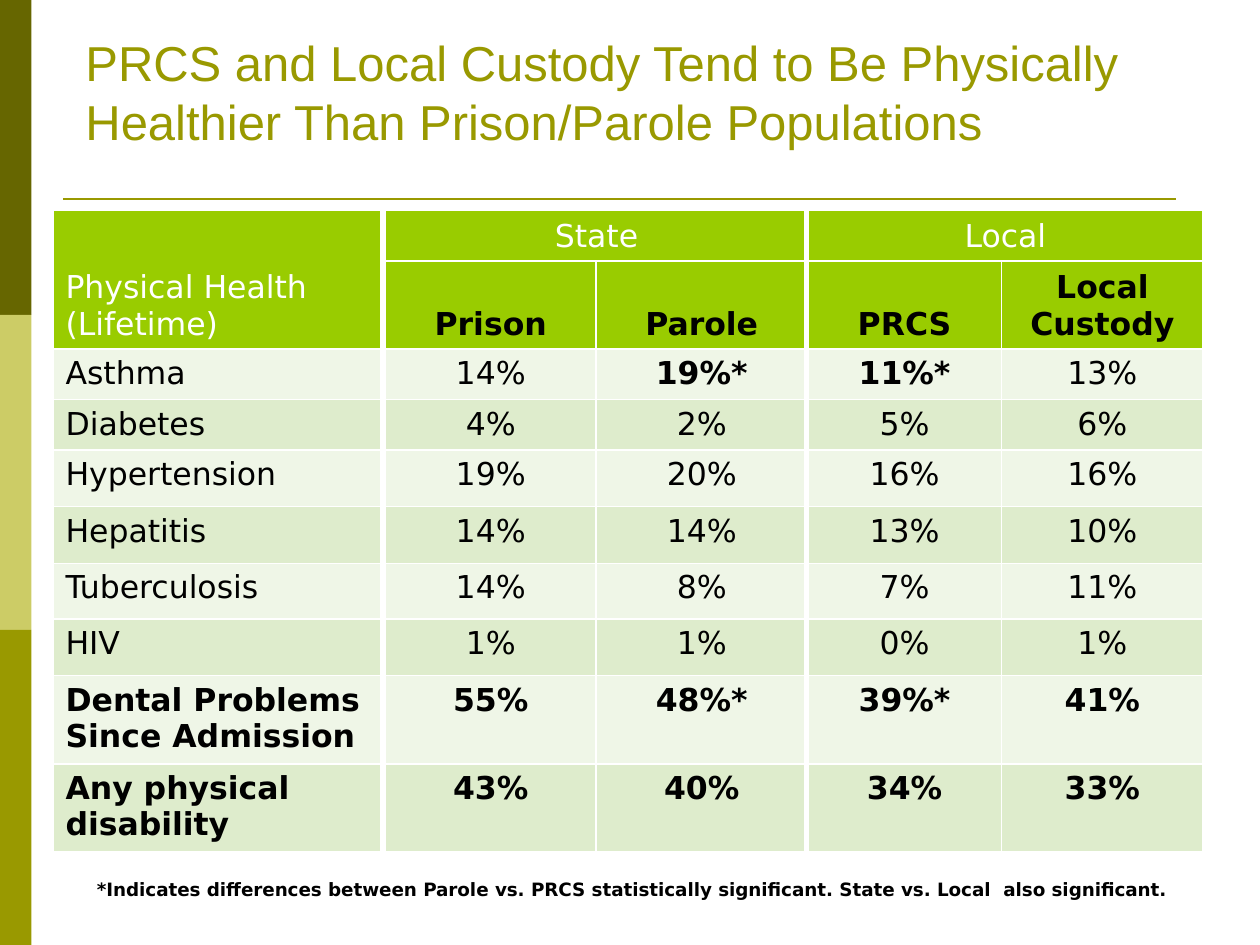
"""Build a slide with a table comparing physical health across custody groups."""
import pptx
import pptx.dml.color
import pptx.enum.shapes
import pptx.enum.text
import pptx.oxml
import pptx.util
import pptx.oxml.ns

Inches = pptx.util.Inches
RGBColor = pptx.dml.color.RGBColor
ANCHOR = pptx.enum.text.MSO_ANCHOR
ALIGN = pptx.enum.text.PP_ALIGN

BLACK = RGBColor(0x00, 0x00, 0x00)
WHITE = RGBColor(0xFF, 0xFF, 0xFF)
OLIVE = RGBColor(0x99, 0x99, 0x00)
DARK_OLIVE = RGBColor(0x66, 0x66, 0x00)
PALE_OLIVE = RGBColor(0xCC, 0xCC, 0x66)
HEADER_GREEN = RGBColor(0x99, 0xCC, 0x00)
BAND_FILLS = (RGBColor(0xEF, 0xF6, 0xE7), RGBColor(0xDE, 0xEC, 0xCC))

TITLE = "PRCS and Local Custody Tend to Be Physically Healthier Than Prison/Parole Populations"
FOOTNOTE = (
    "*Indicates differences between Parole vs. PRCS statistically significant. "
    "State vs. Local  also significant."
)
ROWS = [
    ("Physical Health (Lifetime)", "State", "", "Local", ""),
    ("", "Prison", "Parole", "PRCS", "Local Custody"),
    ("Asthma", "14%", "19%*", "11%*", "13%"),
    ("Diabetes", "4%", "2%", "5%", "6%"),
    ("Hypertension", "19%", "20%", "16%", "16%"),
    ("Hepatitis", "14%", "14%", "13%", "10%"),
    ("Tuberculosis", "14%", "8%", "7%", "11%"),
    ("HIV", "1%", "1%", "0%", "1%"),
    ("Dental Problems Since Admission", "55%", "48%*", "39%*", "41%"),
    ("Any physical disability", "43%", "40%", "34%", "33%"),
]
HEADER_ROWS = 2
BOLD_ROWS = (1, 8, 9)
MERGES = [((0, 0), (1, 0)), ((0, 1), (0, 2)), ((0, 3), (0, 4))]
COLUMN_WIDTHS = (2.64, 1.67, 1.68, 1.54, 1.6)
ROW_HEIGHTS = (0.39, 0.68, 0.39, 0.39, 0.45, 0.45, 0.44, 0.45, 0.68, 0.68)
SIDE_BANDS = (DARK_OLIVE, PALE_OLIVE, OLIVE)
RULES = [
    ((0.5, 1.58), (9.33, 1.58), OLIVE, 1.5),
    ((3.04, 1.67), (3.04, 6.79), WHITE, 3),
    ((6.4, 1.65), (6.4, 6.77), WHITE, 3),
]


def style(paragraph, font_name, size, color, bold=False):
    font = paragraph.font
    font.name, font.size, font.bold = font_name, pptx.util.Pt(size), bold
    font.color.rgb = color


def add_text(page, text, place, font_name, size, color, bold, wrap, anchor):
    box = page.shapes.add_textbox(*map(Inches, place))
    frame = box.text_frame
    frame.word_wrap, frame.vertical_anchor = wrap, anchor
    frame.text = text
    style(frame.paragraphs[0], font_name, size, color, bold)


def add_side_bands(page):
    for index, color in enumerate(SIDE_BANDS):
        band = page.shapes.add_shape(
            pptx.enum.shapes.MSO_SHAPE.RECTANGLE,
            0, Inches(2.5 * index), Inches(0.25), Inches(2.5),
        )
        band.shadow.inherit = False
        band.fill.solid()
        band.fill.fore_color.rgb = color
        band.line.fill.background()


def add_rule(page, start, end, color, width):
    rule = page.shapes.add_connector(
        pptx.enum.shapes.MSO_CONNECTOR.STRAIGHT, *map(Inches, start + end)
    )
    rule.line.color.rgb = color
    rule.line.width = pptx.util.Pt(width)
    properties = rule._element.spPr
    properties.append(properties.makeelement(pptx.oxml.ns.qn("a:effectLst"), {}))


def add_borders(cell):
    properties = cell._tc.get_or_add_tcPr()
    for index, side in enumerate(("lnL", "lnR", "lnT", "lnB")):
        border = pptx.oxml.parse_xml(
            f'<a:{side} {pptx.oxml.ns.nsdecls("a")} w="{pptx.util.Pt(1)}"><a:solidFill>'
            f'<a:srgbClr val="{WHITE}"/></a:solidFill></a:{side}>'
        )
        properties.insert(index, border)


def fill_cell(cell, text, row, column):
    header = row < HEADER_ROWS
    cell.fill.solid()
    cell.fill.fore_color.rgb = HEADER_GREEN if header else BAND_FILLS[row % 2]
    add_borders(cell)
    if not text:
        return
    cell.vertical_anchor = ANCHOR.BOTTOM if header else ANCHOR.TOP
    cell.text = text
    paragraph = cell.text_frame.paragraphs[0]
    paragraph.alignment = ALIGN.CENTER if column else ALIGN.LEFT
    bold = row in BOLD_ROWS or text.endswith("*")
    style(paragraph, "DejaVu Sans", 18, WHITE if header and not bold else BLACK, bold)


def add_health_table(page):
    table = page.shapes.add_table(
        len(ROWS), len(COLUMN_WIDTHS), Inches(0.42), Inches(1.67),
        Inches(sum(COLUMN_WIDTHS)), Inches(sum(ROW_HEIGHTS)),
    ).table
    for column, width in zip(table.columns, COLUMN_WIDTHS):
        column.width = Inches(width)
    for row, height in zip(table.rows, ROW_HEIGHTS):
        row.height = Inches(height)
    for first, last in MERGES:
        table.cell(*first).merge(table.cell(*last))
    for row, values in enumerate(ROWS):
        for column, text in enumerate(values):
            fill_cell(table.cell(row, column), text, row, column)


def main():
    deck = pptx.Presentation()
    deck.slide_width, deck.slide_height = Inches(10), Inches(7.5)
    page = deck.slides.add_slide(deck.slide_layouts[6])
    add_side_bands(page)
    add_text(page, TITLE, (0.58, 0.25, 10, 0.99), "Arial", 28, OLIVE, False, True, ANCHOR.BOTTOM)
    add_health_table(page)
    add_text(page, FOOTNOTE, (0.67, 6.92, 8.82, 0.28), "DejaVu Sans", 10.5, BLACK, True, False, ANCHOR.TOP)
    for rule in RULES:
        add_rule(page, *rule)
    deck.save("out.pptx")


if __name__ == "__main__":
    main()
